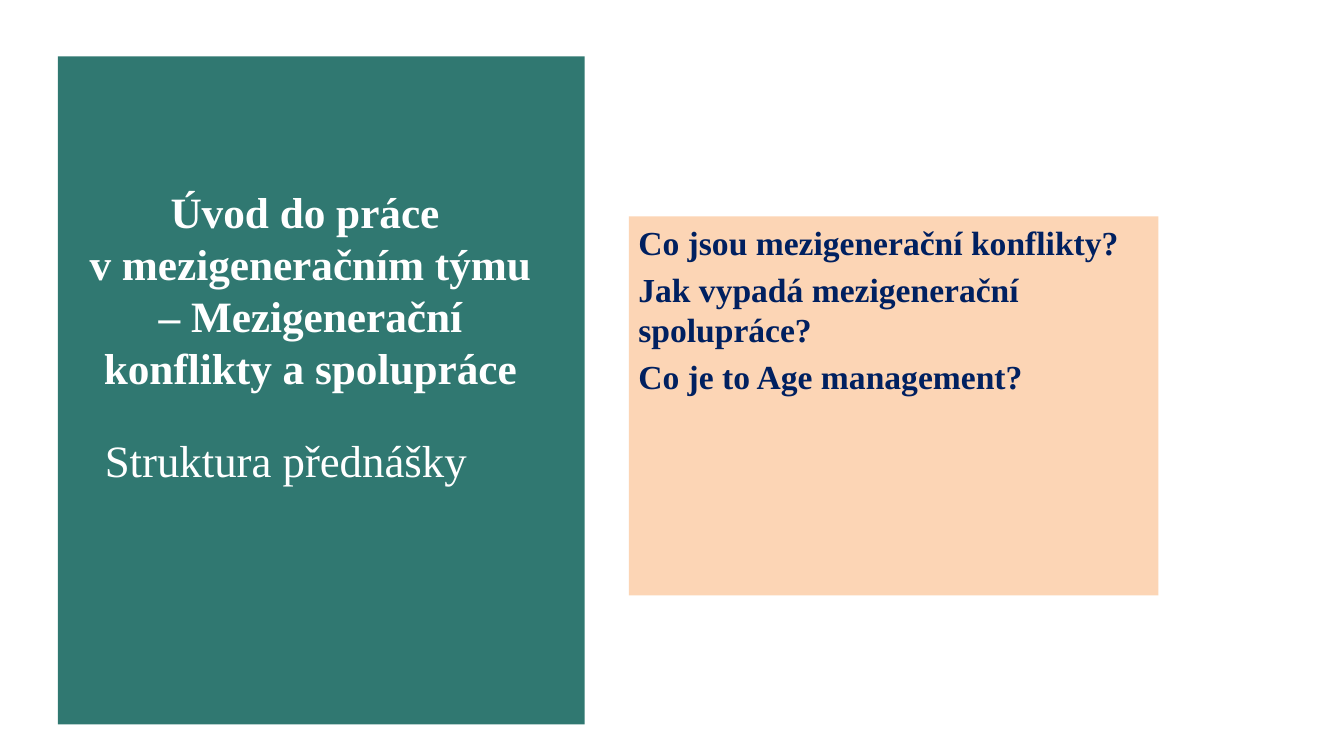
from copy import deepcopy

from pptx import Presentation
from pptx.dml.color import RGBColor
from pptx.enum.shapes import MSO_SHAPE
from pptx.enum.text import MSO_ANCHOR, MSO_AUTO_SIZE, PP_ALIGN
from pptx.util import Inches, Pt

RECTANGLE = MSO_SHAPE.RECTANGLE
TOP = MSO_ANCHOR.TOP
NO_AUTOFIT = MSO_AUTO_SIZE.NONE
LEFT, CENTER = PP_ALIGN.LEFT, PP_ALIGN.CENTER

FONT = "Times New Roman"
TEAL, PEACH, NAVY, WHITE = "307871", "FCD5B5", "002060", "FFFFFF"

TITLE = "Úvod do práce \vv mezigeneračním týmu – Mezigenerační konflikty a spolupráce"
QUESTIONS = [
    "Co jsou mezigenerační konflikty?",
    "Jak vypadá mezigenerační spolupráce?",
    "Co je to Age management?",
]


def color(value):
    """Turn a hex string into a colour."""
    return RGBColor.from_string(value)


def set_values(target, values):
    """Set each attribute named in a dict of format values."""
    for name, value in values.items():
        setattr(target, name, value)


def format_spans(para, size, hex_color, bold):
    """Format the runs of a paragraph and give its line breaks the same format."""
    for span in para.runs:
        set_values(span.font, {"name": FONT, "size": Pt(size), "bold": bold})
        span.font.color.rgb = color(hex_color)
    for line_break in para._p.br_lst if hasattr(para._p, "br_lst") else para._p.xpath("a:br"):
        line_break.append(deepcopy(para.runs[0]._r.rPr))


def write(box, lines, size, hex_color, bold=False, align=LEFT, gap=0):
    """Fill a box with one formatted paragraph per line."""
    frame = box.text_frame
    set_values(frame, {
        "word_wrap": True, "auto_size": NO_AUTOFIT, "vertical_anchor": TOP,
        "margin_left": Inches(0.07), "margin_right": Inches(0.07),
        "margin_top": Inches(0.04), "margin_bottom": Inches(0.04),
    })
    for index, line in enumerate(lines):
        para = frame.add_paragraph() if index else frame.paragraphs[0]
        set_values(para, {
            "text": line, "alignment": align, "space_before": Pt(gap if index else 0),
        })
        format_spans(para, size, hex_color, bold)


def add_panel(slide, left, top, width, height, fill):
    """Add a filled rectangle without outline."""
    panel = slide.shapes.add_shape(
        RECTANGLE, Inches(left), Inches(top), Inches(width), Inches(height))
    panel.shadow.inherit = False
    panel.fill.solid()
    panel.fill.fore_color.rgb = color(fill)
    panel.line.fill.background()
    return panel


def place_title(slide, left, top, width, height):
    """Move the title placeholder in front of the panels and return it."""
    title = slide.shapes.title
    set_values(title, {
        "left": Inches(left), "top": Inches(top),
        "width": Inches(width), "height": Inches(height),
    })
    slide.shapes.element.append(title.element)
    return title


def main():
    """Build the lecture outline slide."""
    deck = Presentation()
    width = Inches(10)
    set_values(deck, {"slide_width": width, "slide_height": width * 9 // 16})
    slide = deck.slides.add_slide(deck.slide_layouts[5])

    add_panel(slide, 0.43, 0.42, 3.92, 4.97, TEAL)
    title = place_title(slide, 0.55, 1.34, 3.52, 1.65)
    write(title, [TITLE], 23.2, WHITE, bold=True, align=CENTER)

    questions = add_panel(slide, 4.68, 1.61, 3.94, 2.82, PEACH)
    write(questions, QUESTIONS, 18, NAVY, bold=True, gap=3.6)

    subtitle = slide.shapes.add_textbox(
        Inches(0.71), Inches(3.18), Inches(2.96), Inches(0.48))
    write(subtitle, ["Struktura přednášky"], 24, WHITE)

    deck.save("out.pptx")


if __name__ == "__main__":
    main()
